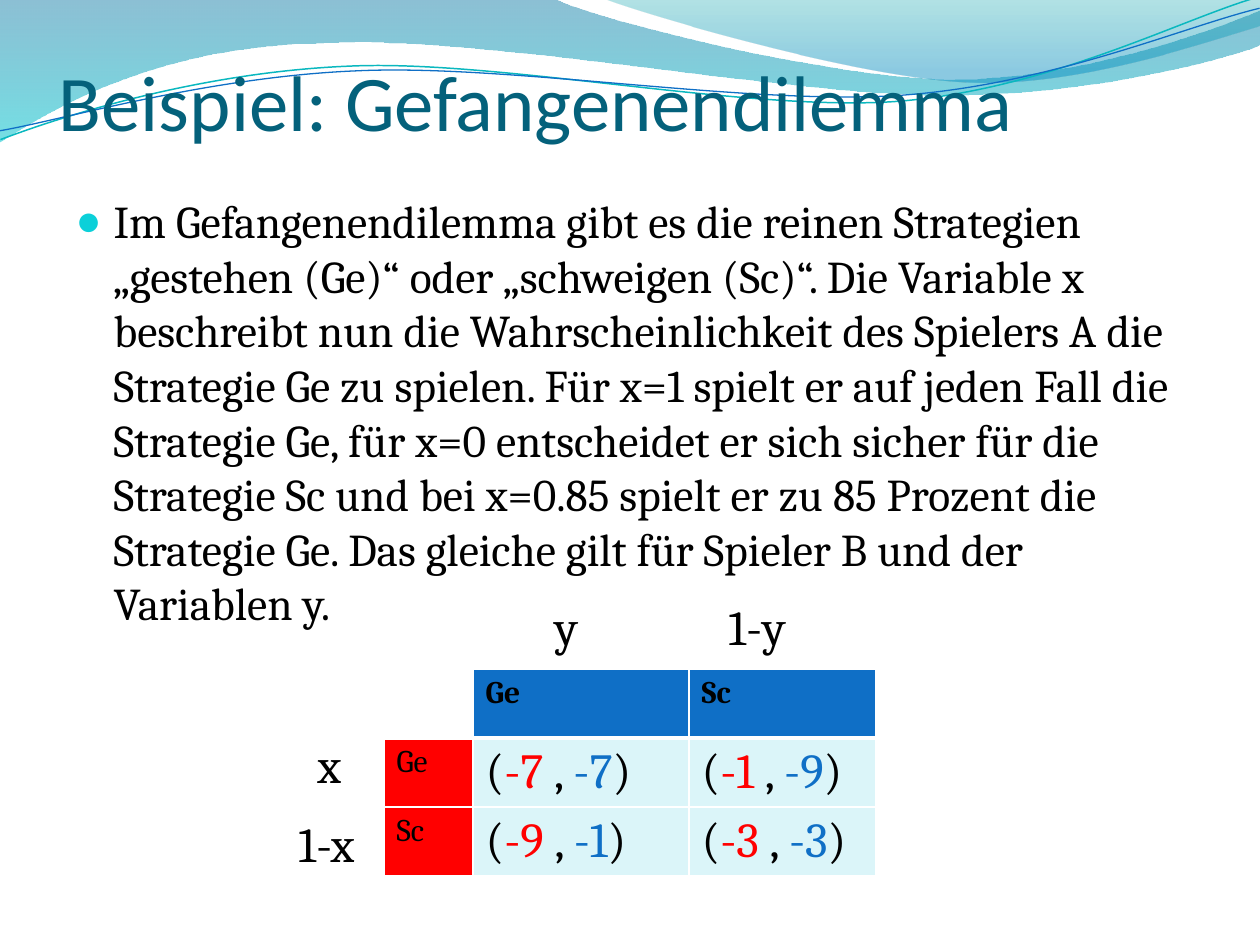
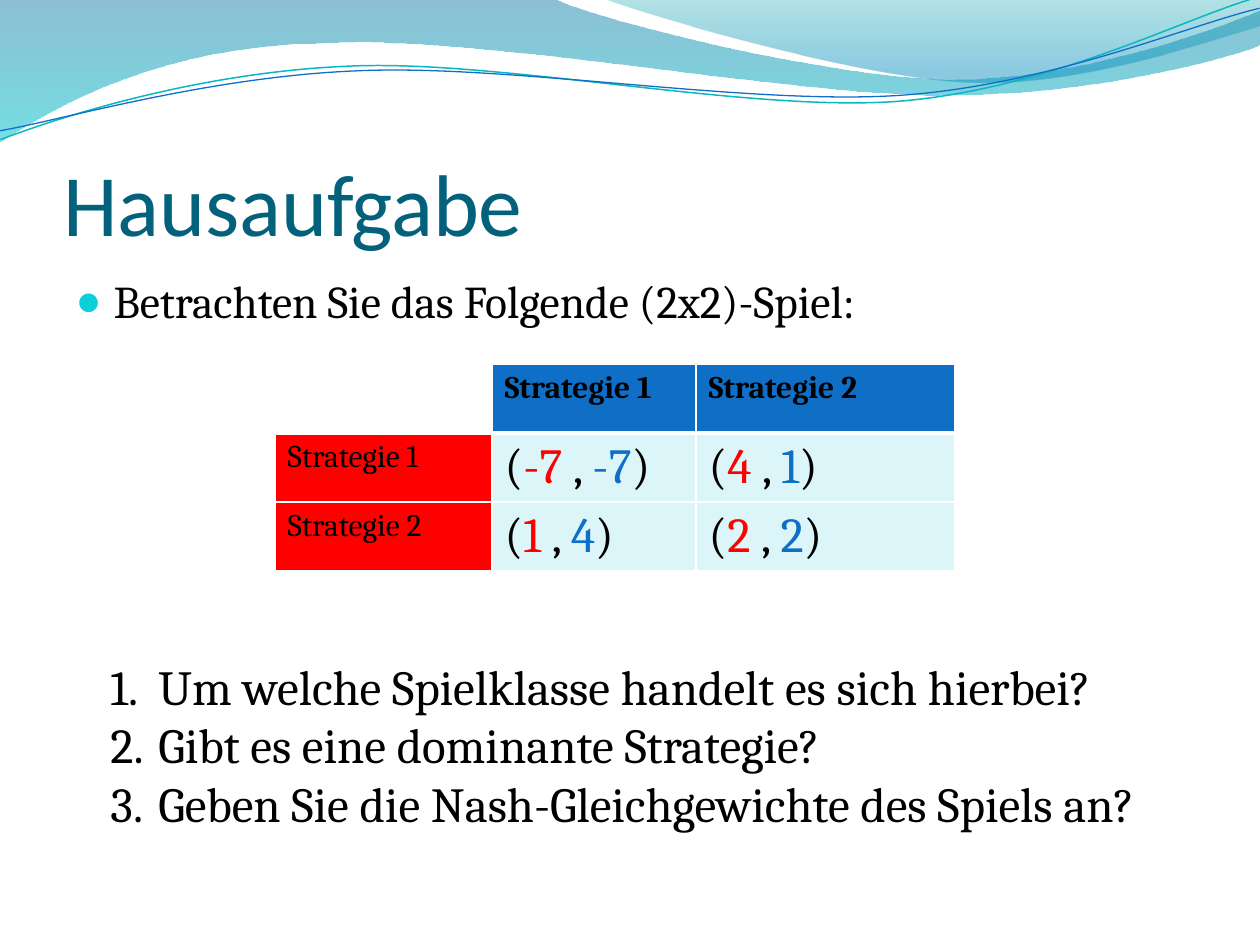
import pptx
import pptx.dml.color
import pptx.enum.text
import pptx.oxml
import pptx.oxml.ns
import pptx.util

RGB = pptx.dml.color.RGBColor
BLACK = RGB(0x00, 0x00, 0x00)
WHITE = RGB(0xFF, 0xFF, 0xFF)
RED = RGB(0xFF, 0x00, 0x00)
BLUE = RGB(0x0F, 0x6F, 0xC6)
PALE = RGB(0xDB, 0xF5, 0xF9)
PETROL = RGB(0x04, 0x61, 0x7B)
CYAN = RGB(0x0B, 0xD0, 0xD9)
TEAL = RGB(0x0A, 0xB8, 0xBF)

HEAD_FONT = "Calibri"
TEXT_FONT = "Cambria"
SCALE = 914400 / 126
ROW = 69
TILT = 357.3

BANDS = [
    ([(0, 0), (554, -1), (600, 21, 837, 79, 955, 79), (1075, 79, 1207, 33, 1260, 11),
      (1261, 45), (1239, 55, 1096, 96, 940, 95), (784, 95, 481, 35, 324, 43),
      (163, 45, 58, 105, -1, 142), (0, 0)],
     [(0, RGB(0x00, 0x74, 0xA1), 45), (1, RGB(0x00, 0xC6, 0xCF), 55)]),
    ([(604, -1), (641, 14, 859, 78, 969, 82), (1079, 87, 1211, 40, 1260, 26),
      (1260, 0), (604, -1)],
     [(0, RGB(0x00, 0xA1, 0xA9), 30), (0.8, RGB(0x00, 0x8B, 0xBF), 45)]),
]
LINES = [
    ([(-2, 110), (59, 90, 199, 52, 350, 53), (499, 53, 745, 118, 896, 114),
      (1049, 109, 1184, 45, 1260, 27)], TEAL, 0.85),
    ([(-2, 101), (57, 94, 207, 57, 357, 58), (509, 58, 750, 112, 902, 108),
      (1052, 104, 1188, 52, 1262, 38)], BLUE, 0.75),
]


def px(length):
    """Turn px into EMU."""
    return pptx.util.Emu(round(length * SCALE))


def add_xml(parent, tag, inner="", **attrs):
    """Append a drawing element, with optional inner markup, to its parent."""
    space = pptx.oxml.ns.nsdecls("a")
    text = "".join(f' {key}="{value}"' for key, value in attrs.items())
    parent.append(pptx.oxml.parse_xml(f"<a:{tag} {space}{text}>{inner}</a:{tag}>"))


def solid(color):
    """Give the inner markup of a plain colour."""
    return f'<a:srgbClr val="{color}"/>'


def bend(shape, parts):
    """Join the three segments of each curve into one cubic segment."""
    name = pptx.oxml.ns.qn
    lines = iter(list(shape.element.spPr.iter(name("a:lnTo"))))
    for part in parts[1:]:
        group = [next(lines) for _ in range(len(part) // 2)]
        if len(group) == 3:
            curve = group[0].makeelement(name("a:cubicBezTo"))
            group[0].addprevious(curve)
            for line in group:
                curve.append(line[0])
                line.getparent().remove(line)


def add_curve(slide, layout, parts, close):
    """Build one outline and move it to the layout."""
    first, *rest = [(px(part[i]), px(part[i + 1]))
                    for part in parts for i in range(0, len(part), 2)]
    pen = slide.shapes.build_freeform(*first)
    pen.add_line_segments(rest, close=close)
    shape = pen.convert_to_shape()
    bend(shape, parts)
    shape.shadow.inherit = False
    layout.shapes.element.append(shape.element)
    return shape


def add_wave(slide, layout):
    """Draw the shared wave at the top of the layout."""
    for parts, stops in BANDS:
        band = add_curve(slide, layout, parts, True)
        band.line.fill.background()
        band.fill.gradient()
        band.fill.gradient_angle = 270
        for stop, (spot, color, _) in zip(band.fill.gradient_stops, stops):
            stop.position = spot
            stop.color.rgb = color
        tones = band.element.spPr.iter(pptx.oxml.ns.qn("a:srgbClr"))
        for tone, (_, _, alpha) in zip(tones, stops):
            add_xml(tone, "alpha", val=alpha * 1000)
    for parts, color, width in LINES:
        line = add_curve(slide, layout, parts, False)
        line.rotation = TILT
        line.fill.background()
        line.line.color.rgb = color
        line.line.width = pptx.util.Pt(width)


def place(shape, box):
    """Set a shape to a box of left, top, width and height."""
    shape.left, shape.top, shape.width, shape.height = map(px, box)


def add_run(para, text, size, color=BLACK, font=TEXT_FONT, bold=False):
    """Add one formatted run."""
    run = para.add_run()
    run.text = text
    run.font.size = pptx.util.Pt(size)
    run.font.name = font
    run.font.bold = bold
    run.font.color.rgb = color


def indent(para, depth):
    """Set a hanging indent and return the paragraph properties."""
    props = para._p.get_or_add_pPr()
    props.set("marL", str(px(depth)))
    props.set("indent", str(-px(depth)))
    return props


def add_title(slide, box, text, size):
    """Fill the title placeholder."""
    title = slide.shapes.title
    place(title, box)
    frame = title.text_frame
    frame.auto_size = pptx.enum.text.MSO_AUTO_SIZE.NONE
    frame.vertical_anchor = pptx.enum.text.MSO_ANCHOR.BOTTOM
    frame.margin_left = frame.margin_right = frame.margin_bottom = 0
    para = frame.paragraphs[0]
    para.alignment = pptx.enum.text.PP_ALIGN.LEFT
    add_run(para, text, size, PETROL, HEAD_FONT)


def add_body(slide, box, text):
    """Fill the body placeholder with one bullet point."""
    body = slide.placeholders[1]
    place(body, box)
    body.text_frame.auto_size = pptx.enum.text.MSO_AUTO_SIZE.NONE
    para = body.text_frame.paragraphs[0]
    para.space_before = pptx.util.Pt(5)
    props = indent(para, 38)
    add_xml(props, "buClr", solid(CYAN))
    add_xml(props, "buSzPct", val=95000)
    add_xml(props, "buChar", char="●")
    add_run(para, text, 26)


def add_box(slide, box):
    """Add a wrapping text box and return its frame."""
    frame = slide.shapes.add_textbox(*map(px, box)).text_frame
    frame.word_wrap = True
    return frame


def add_label(slide, box, text, stop=0):
    """Add a label, with an optional tab stop."""
    para = add_box(slide, box).paragraphs[0]
    if stop:
        add_xml(para._p.get_or_add_pPr(), "tabLst", f'<a:tab pos="{px(stop)}" algn="l"/>')
    add_run(para, text, 28)


def add_tasks(slide, box, tasks):
    """Add a numbered list."""
    frame = add_box(slide, box)
    for count, task in enumerate(tasks):
        para = frame.add_paragraph() if count else frame.paragraphs[0]
        add_xml(indent(para, 48), "buAutoNum", type="arabicPeriod")
        add_run(para, task, 28)


def add_edges(cell, head):
    """Draw white cell borders, thicker below the head row."""
    props = cell._tc.get_or_add_tcPr()
    for spot, side in enumerate(("lnL", "lnR", "lnT", "lnB")):
        width = 3 if head and side == "lnB" else 1
        add_xml(props, side, f"<a:solidFill>{solid(WHITE)}</a:solidFill>",
                w=pptx.util.Pt(width))
        props.insert(spot, props[-1])


def add_game(slide, spot, widths, names, payoffs):
    """Add the payoff table of a game for two players."""
    box = (*spot, sum(widths), 3 * ROW)
    table = slide.shapes.add_table(3, 3, *map(px, box)).table
    table.horz_banding = False
    for column, width in zip(table.columns, widths):
        column.width = px(width)
    for row in range(3):
        table.rows[row].height = px(ROW)
        for col in range(3):
            cell = table.cell(row, col)
            para = cell.text_frame.paragraphs[0]
            fill = PALE
            if row and col:
                red, blue = payoffs[row - 1][col - 1]
                for text, color in (("(", BLACK), (f"{red} ", RED), (", ", BLACK),
                                    (f"{blue}", BLUE), (")", BLACK)):
                    add_run(para, text, 28, color)
            elif row or col:
                fill = RED if row else BLUE
                add_run(para, names[row + col - 1], 18, bold=row == 0)
            else:
                fill = WHITE
            cell.fill.solid()
            cell.fill.fore_color.rgb = fill
            add_edges(cell, row == 0)


def fill_sample(slide):
    """Build the slide on the prisoners' game."""
    add_title(slide, (59, 39, 1134, 108), "Beispiel: Gefangenendilemma", 45)
    add_body(slide, (63, 187, 1134, 684),
             "Im Gefangenendilemma gibt es die reinen Strategien „gestehen (Ge)“ oder "
             "„schweigen (Sc)“. Die Variable x beschreibt nun die Wahrscheinlichkeit des "
             "Spielers A die Strategie Ge zu spielen. Für x=1 spielt er auf jeden Fall die "
             "Strategie Ge, für x=0 entscheidet er sich sicher für die Strategie Sc und bei "
             "x=0.85 spielt er zu 85 Prozent die Strategie Ge. Das gleiche gilt für "
             "Spieler B und der Variablen y.")
    add_game(slide, (384, 669), (89, 216, 187), ("Ge", "Sc"),
             [[(-7, -7), (-1, -9)], [(-9, -1), (-3, -3)]])
    add_label(slide, (305, 728, 49, 72), "x")
    add_label(slide, (286, 807, 102, 72), "1-x")
    add_label(slide, (542, 590, 278, 72), "y\t1-y", 174)


def fill_homework(slide):
    """Build the slide with the homework."""
    add_title(slide, (63, 97, 1134, 157), "Hausaufgabe", 50)
    add_body(slide, (63, 267, 1134, 605), "Betrachten Sie das Folgende (2x2)-Spiel:")
    add_game(slide, (275, 364), (217, 204, 259), ("Strategie 1", "Strategie 2"),
             [[(-7, -7), (4, 1)], [(1, 4), (2, 2)]])
    add_tasks(slide, (98, 650, 1128, 190),
              ["Um welche Spielklasse handelt es sich hierbei?",
               "Gibt es eine dominante Strategie?",
               "Geben Sie die Nash-Gleichgewichte des Spiels an?"])


def main():
    """Build and save the slides."""
    deck = pptx.Presentation()
    deck.slide_width, deck.slide_height = px(1260), px(945)
    layout = deck.slide_layouts[1]
    sample, homework = (deck.slides.add_slide(layout) for _ in range(2))
    add_wave(sample, layout)
    fill_sample(sample)
    fill_homework(homework)
    deck.save("out.pptx")


if __name__ == "__main__":
    main()
